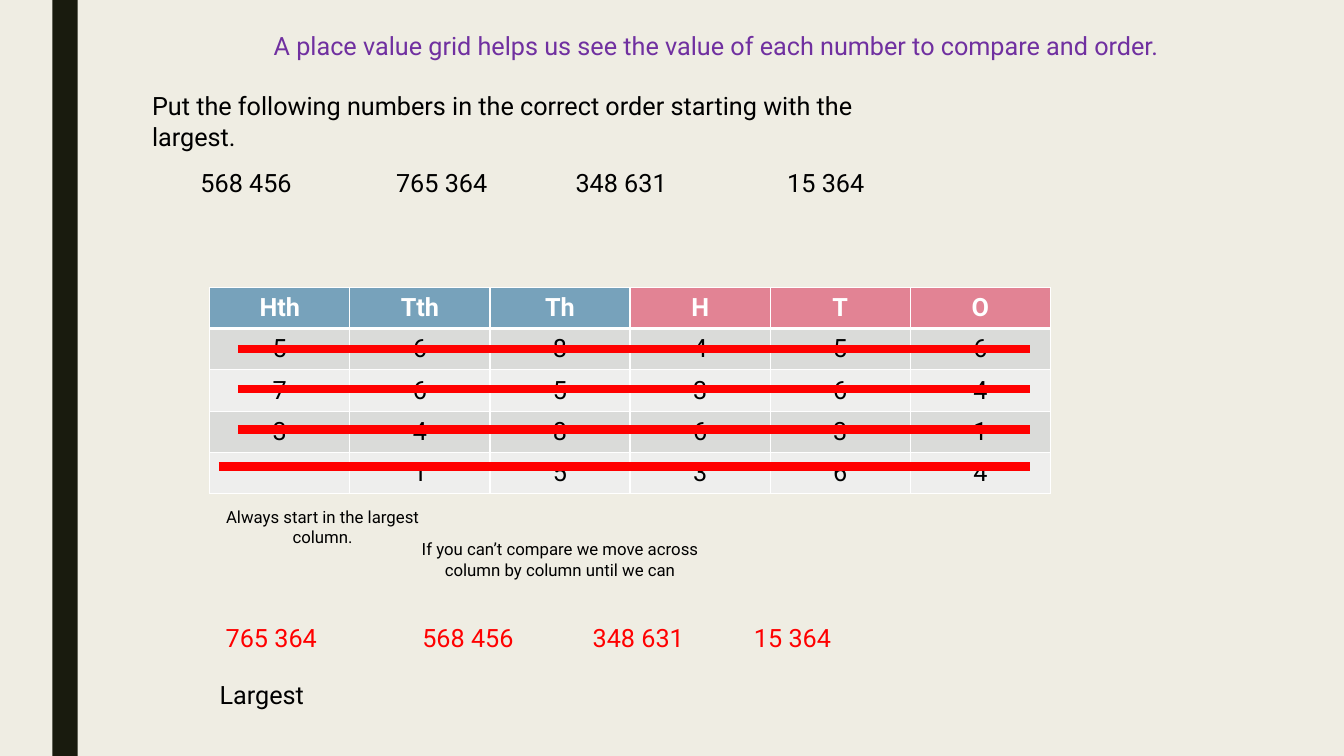
from lxml import etree
from pptx import Presentation
from pptx.dml.color import RGBColor
from pptx.enum import shapes, text
from pptx.oxml import ns
from pptx.util import Inches, Pt

FONT = "Roboto"
CREAM = RGBColor(0xEF, 0xED, 0xE3)
DARK = RGBColor(0x19, 0x1B, 0x0E)
BLACK = RGBColor(0, 0, 0)
WHITE = RGBColor(0xFF, 0xFF, 0xFF)
RED = RGBColor(0xFF, 0, 0)
PURPLE = RGBColor(0x70, 0x30, 0xA0)
BLUE = RGBColor(0x77, 0xA2, 0xBB)
PINK = RGBColor(0xE2, 0x83, 0x94)
GREY = RGBColor(0xDA, 0xDB, 0xD9)
PALE = RGBColor(0xEE, 0xEE, 0xED)
LEFT, CENTER = text.PP_ALIGN.LEFT, text.PP_ALIGN.CENTER

TITLE = "A place value grid helps us see the value of each number to compare and order."
TASK = "Put the following numbers in the correct order starting with the largest."
COLUMNS = ["Hth", "Tth", "Th", "H", "T", "O"]
NUMBERS = ["568 456", "765 364", "348 631", "15 364"]
ANSWERS = ["765 364", "568 456", "348 631", "15 364"]
NUMBER_LEFTS = [1.89, 3.83, 5.61, 7.71]
ANSWER_LEFTS = [2.14, 4.09, 5.78, 7.38]
NUMBER_TOP, ANSWER_TOP = 1.61, 6.12
GRID_LEFT, GRID_TOP, COL_W, ROW_H = 2.08, 2.85, 1.39, 0.41
STRIKES = [(2.36, 3.46), (2.36, 3.86), (2.36, 4.26), (2.17, 4.63)]
STRIKE_RIGHT = 10.22

LABELS = [
    (TITLE, 2.08, 0.25, 10.05, 0.4, 18, PURPLE, CENTER),
    (TASK, 1.41, 0.85, 8.0, 0.7, 18, BLACK, LEFT),
    ("Always start in the largest column.", 1.85, 4.98, 2.7, 0.5, 12, BLACK, CENTER),
    ("If you can’t compare we move across column by column until we can",
     3.79, 5.3, 3.53, 0.5, 12, BLACK, CENTER),
    ("Largest", 2.08, 6.69, 1.04, 0.4, 18, BLACK, LEFT),
]
LABELS += [(n, x, NUMBER_TOP, 1.2, 0.4, 18, BLACK, LEFT)
           for n, x in zip(NUMBERS, NUMBER_LEFTS)]
LABELS += [(n, x, ANSWER_TOP, 1.2, 0.4, 18, RED, LEFT)
           for n, x in zip(ANSWERS, ANSWER_LEFTS)]


def write(tf, words, size, color, align, bold=False):
    tf.text = words
    p = tf.paragraphs[0]
    p.alignment = align
    for r in p.runs:
        r.font.name = FONT
        r.font.size = Pt(size)
        r.font.bold = bold
        r.font.color.rgb = color


def add_borders(cell, bottom):
    tc_pr = cell._tc.get_or_add_tcPr()
    for side, width in (("L", 1), ("R", 1), ("T", 1), ("B", bottom)):
        ln = etree.SubElement(tc_pr, ns.qn(f"a:ln{side}"), w=str(Pt(width)))
        fill = etree.SubElement(ln, ns.qn("a:solidFill"))
        etree.SubElement(fill, ns.qn("a:srgbClr"), val=str(WHITE))


def add_grid(s):
    rows = [COLUMNS] + [list(n.replace(" ", "").rjust(len(COLUMNS))) for n in NUMBERS]
    table = s.shapes.add_table(
        len(rows), len(COLUMNS), Inches(GRID_LEFT), Inches(GRID_TOP),
        Inches(COL_W * len(COLUMNS)), Inches(ROW_H * len(rows))).table
    for col in table.columns:
        col.width = Inches(COL_W)
    for i, row in enumerate(rows):
        table.rows[i].height = Inches(ROW_H)
        for j, value in enumerate(row):
            cell = table.cell(i, j)
            header = i == 0
            cell.vertical_anchor = text.MSO_ANCHOR.MIDDLE
            write(cell.text_frame, value.strip(), 18,
                  WHITE if header else BLACK, CENTER, header)
            add_borders(cell, 3 if header else 1)
            cell.fill.solid()
            if header:
                cell.fill.fore_color.rgb = BLUE if j < 3 else PINK
            else:
                cell.fill.fore_color.rgb = GREY if i % 2 else PALE


def main():
    prs = Presentation()
    prs.slide_width, prs.slide_height = Inches(13.33), Inches(7.5)
    s = prs.slides.add_slide(prs.slide_layouts[6])
    s.background.fill.solid()
    s.background.fill.fore_color.rgb = CREAM

    bar = s.shapes.add_shape(shapes.MSO_SHAPE.RECTANGLE, Inches(0.52), 0,
                             Inches(0.25), prs.slide_height)
    bar.shadow.inherit = False
    bar.fill.solid()
    bar.fill.fore_color.rgb = DARK
    bar.line.fill.background()

    add_grid(s)

    for words, x, y, w, h, size, color, align in LABELS:
        sp = s.shapes.add_textbox(Inches(x), Inches(y), Inches(w), Inches(h))
        sp.text_frame.word_wrap = True
        write(sp.text_frame, words, size, color, align)

    for x, y in STRIKES:
        strike = s.shapes.add_connector(shapes.MSO_CONNECTOR.STRAIGHT, Inches(x),
                                        Inches(y), Inches(STRIKE_RIGHT), Inches(y))
        strike.line.color.rgb = RED
        strike.line.width = Pt(6)
        etree.SubElement(strike._element.spPr, ns.qn("a:effectLst"))

    prs.save("out.pptx")


if __name__ == "__main__":
    main()
